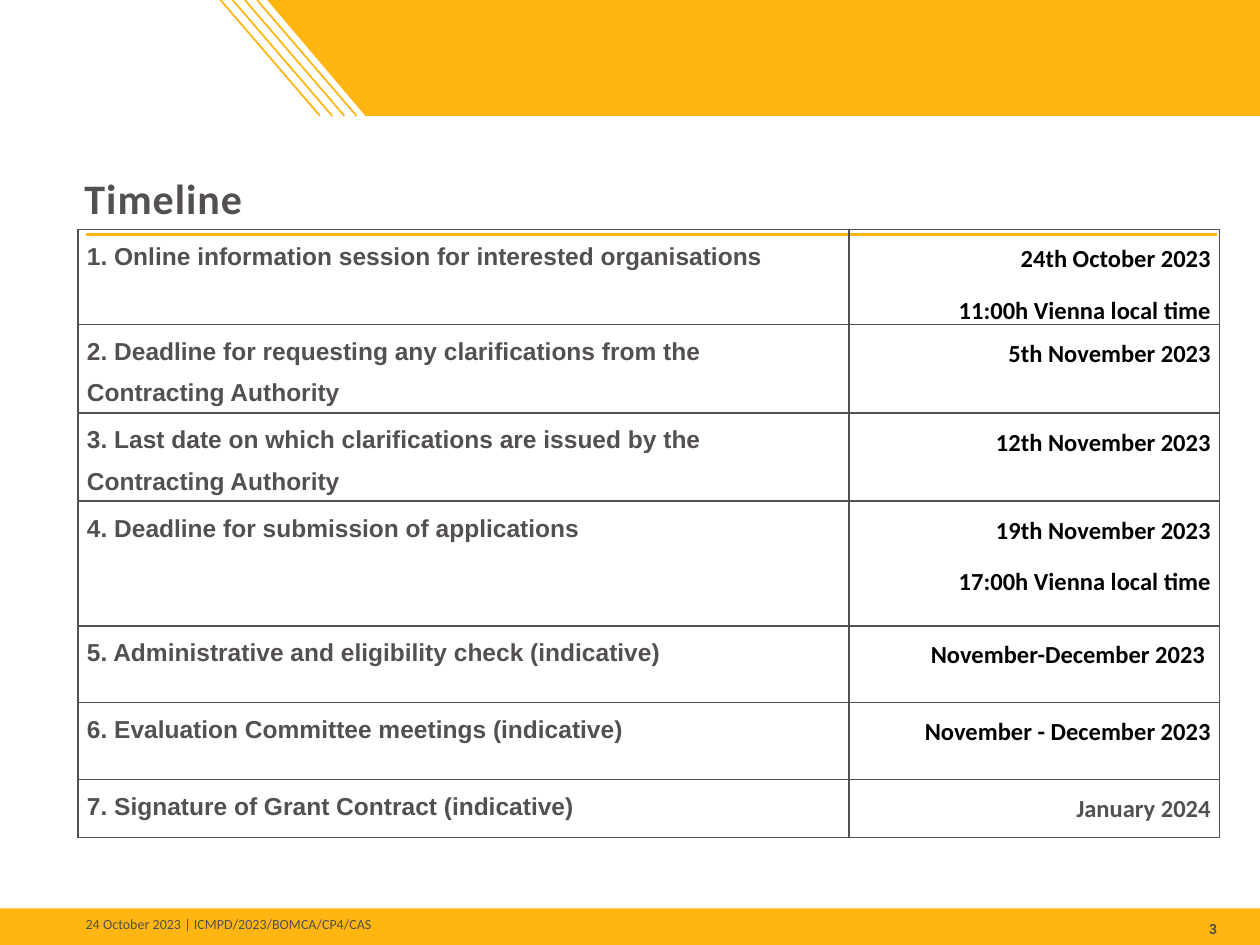
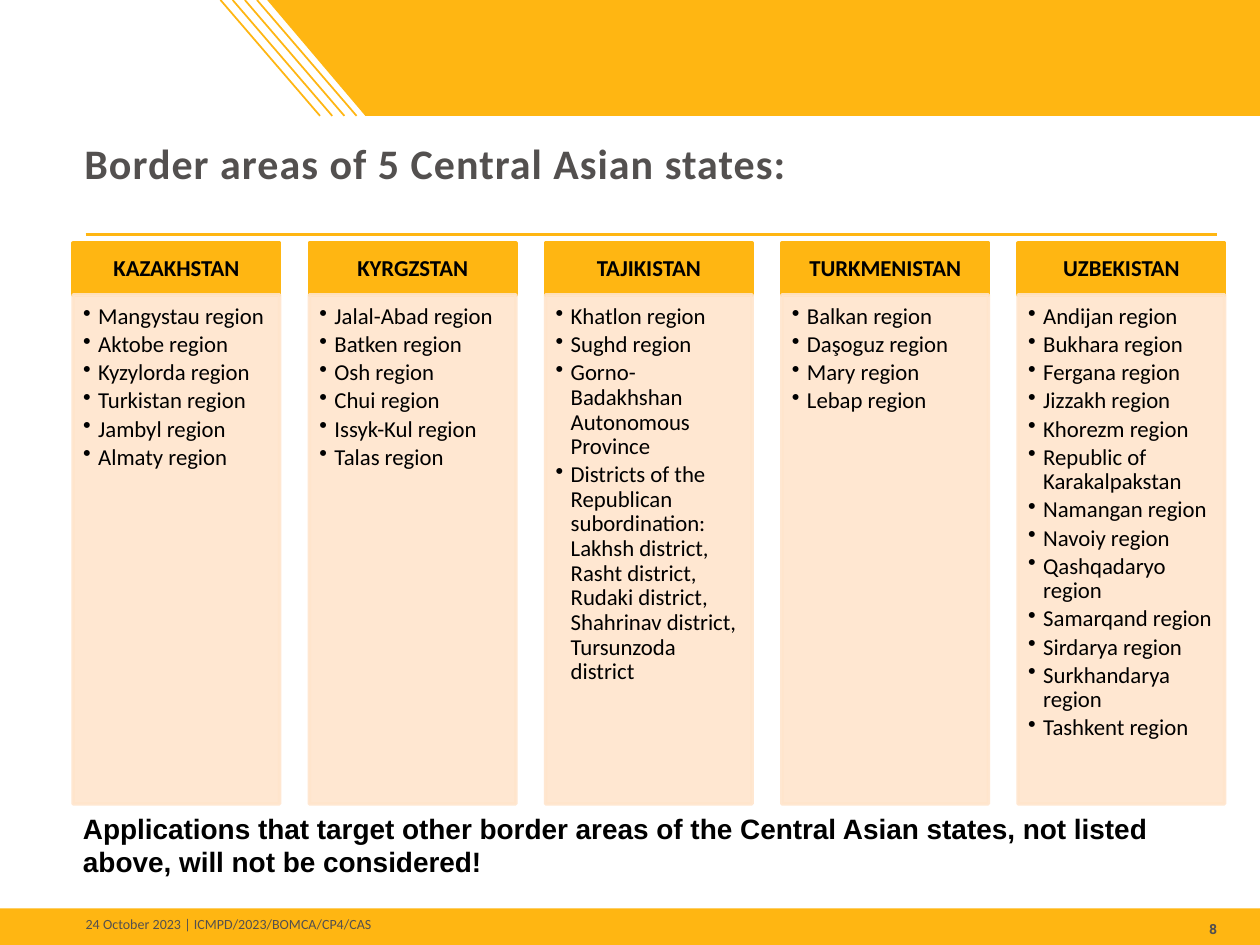
"""Build two slides of a grant call: its timeline and the border areas it covers."""
import dataclasses

import lxml.etree
import pptx
import pptx.dml.color
import pptx.enum.shapes
import pptx.enum.text
import pptx.oxml.ns
import pptx.util

Inches = pptx.util.Inches
Pt = pptx.util.Pt
RGB = pptx.dml.color.RGBColor
qn = pptx.oxml.ns.qn
Align = pptx.enum.text.PP_ALIGN
Anchor = pptx.enum.text.MSO_ANCHOR
Shape = pptx.enum.shapes.MSO_SHAPE


@dataclasses.dataclass(frozen=True)
class Theme:
    gold: str = "FFB612"
    cream: str = "FFE5CC"
    grey: str = "53504F"
    black: str = "000000"
    sans: str = "Calibri"
    block: str = "Arial"
    digit: str = "Roboto"
    small: int = 8
    list: int = 13
    cell: int = 14
    note: int = 16
    title: int = 24


theme = Theme()


def write(frame, lines, face, size, tint, bold=False, align=Align.LEFT,
          inset=(0, 0, 0, 0), anchor=Anchor.TOP):
    """Fill a text frame with lines in one style."""
    frame.word_wrap = True
    frame.vertical_anchor = anchor
    frame.margin_left, frame.margin_top, frame.margin_right, frame.margin_bottom = map(Inches, inset)
    frame.text = "\n".join(lines)
    for para in frame.paragraphs:
        para.alignment = align
        for run in para.runs:
            run.font.name = face
            run.font.size = Pt(size)
            run.font.bold = bold
            run.font.color.rgb = RGB.from_string(tint)


def paint(shape, tint, edge=0):
    """Give a shape a flat fill, with an edge of the same colour if asked."""
    shape.shadow.inherit = False
    shape.fill.solid()
    shape.fill.fore_color.rgb = RGB.from_string(tint)
    if edge:
        shape.line.color.rgb = RGB.from_string(tint)
        shape.line.width = Pt(edge)
    else:
        shape.line.fill.background()


deck = pptx.Presentation()
deck.slide_width, deck.slide_height = Inches(10), Inches(7.5)

stripes = [(1.75 + 0.29 * i / 3, 0, 2.54 + 0.29 * i / 3, 0.92, 1) for i in range(4)]
rules = [(0.68, 1.86, 9.66, 1.86, 1.5)] + stripes
heads = [("Timeline", 0.83, "3"), ("Border areas of 5 Central Asian states:", 0.55, "8")]

for head, height, number in heads:
    slide = deck.slides.add_slide(deck.slide_layouts[5])
    shapes = slide.shapes

    pen = shapes.build_freeform(Inches(2.12), 0)
    pen.add_line_segments([(Inches(x), Inches(y)) for x, y in [(10, 0), (10, 0.92), (2.9, 0.92)]])
    paint(pen.convert_to_shape(), theme.gold)
    paint(shapes.add_shape(Shape.RECTANGLE, 0, Inches(7.21), Inches(10), Inches(0.29)), theme.gold)

    for left, top, right, low, width in rules:
        rule = shapes.add_connector(pptx.enum.shapes.MSO_CONNECTOR.STRAIGHT,
                                    Inches(left), Inches(top), Inches(right), Inches(low))
        rule.line.color.rgb = RGB.from_string(theme.gold)
        rule.line.width = Pt(width)
        lxml.etree.SubElement(rule._element.spPr, qn("a:effectLst"))

    page = shapes.add_textbox(Inches(9), Inches(7.31), Inches(0.66), Inches(0.13))
    write(page.text_frame, [number], theme.digit, theme.small, theme.grey, True,
          Align.RIGHT, anchor=Anchor.MIDDLE)
    foot = shapes.add_textbox(Inches(0.68), Inches(7.27), Inches(4.32), Inches(0.13))
    write(foot.text_frame, ["24 October 2023 | ICMPD/2023/BOMCA/CP4/CAS"], theme.sans,
          theme.small, theme.grey, anchor=Anchor.MIDDLE)

    title = shapes.title
    title.left, title.top, title.width, title.height = map(Inches, (0.57, 0.99, 9.15, height))
    write(title.text_frame, [head], theme.sans, theme.title, theme.grey, True,
          inset=(0.1, 0.05, 0.1, 0.05), anchor=Anchor.BOTTOM)
    title.text_frame.auto_size = pptx.enum.text.MSO_AUTO_SIZE.NONE
    title.text_frame.paragraphs[0].runs[0].font._element.set("spc", "60")

steps = [
    (0.71, "1. Online information session for interested organisations",
     ["24th October 2023", "11:00h Vienna local time"]),
    (0.65, "2. Deadline for requesting any clarifications from the Contracting Authority",
     ["5th November 2023"]),
    (0.65, "3. Last date on which clarifications are issued by the Contracting Authority",
     ["12th November 2023"]),
    (0.99, "4. Deadline for submission of applications",
     ["19th November 2023", "17:00h Vienna local time"]),
    (0.61, "5. Administrative and eligibility check (indicative)", ["November-December 2023 "]),
    (0.61, "6. Evaluation Committee meetings (indicative)", ["November - December 2023"]),
    (0.46, "7. Signature of Grant Contract (indicative)", ["January 2024"]),
]

first, second = deck.slides
table = first.shapes.add_table(len(steps), 2, Inches(0.62), Inches(1.82),
                               Inches(9.06), Inches(4.68)).table
table.first_row = table.horz_banding = False
table.columns[0].width, table.columns[1].width = Inches(6.12), Inches(2.94)

for row, (height, step, dates) in enumerate(steps):
    table.rows[row].height = Inches(height)
    tint = theme.grey if row == len(steps) - 1 else theme.black
    for col, (lines, face, ink, align) in enumerate([
            ([step], theme.block, theme.grey, Align.LEFT),
            (dates, theme.sans, tint, Align.RIGHT)]):
        cell = table.cell(row, col)
        write(cell.text_frame, lines, face, theme.cell, ink, True, align)
        cell.margin_left = cell.margin_right = Inches(0.07)
        cell.margin_top = cell.margin_bottom = 0
        cell.vertical_anchor = Anchor.TOP
        for para in cell.text_frame.paragraphs:
            para.line_spacing = 1.5
            if col:
                para.space_before = Pt(4)
        props = cell._tc.get_or_add_tcPr()
        for side in ("lnL", "lnR", "lnT", "lnB"):
            line = lxml.etree.SubElement(props, qn("a:" + side), w=str(Pt(1)))
            fill = lxml.etree.SubElement(line, qn("a:solidFill"))
            lxml.etree.SubElement(fill, qn("a:srgbClr"), val=theme.grey)
        cell.fill.background()

areas = {
    "KAZAKHSTAN": ["Mangystau region", "Aktobe region", "Kyzylorda region",
                   "Turkistan region", "Jambyl region", "Almaty region"],
    "KYRGZSTAN": ["Jalal-Abad region", "Batken region", "Osh region",
                  "Chui region", "Issyk-Kul region", "Talas region"],
    "TAJIKISTAN": ["Khatlon region", "Sughd region", "Gorno-Badakhshan Autonomous Province",
                   "Districts of the Republican subordination: Lakhsh district, Rasht district, "
                   "Rudaki district, Shahrinav district, Tursunzoda district"],
    "TURKMENISTAN": ["Balkan region", "Daşoguz region", "Mary region", "Lebap region"],
    "UZBEKISTAN": ["Andijan region", "Bukhara region", "Fergana region", "Jizzakh region",
                   "Khorezm region", "Republic of Karakalpakstan", "Namangan region",
                   "Navoiy region", "Qashqadaryo region", "Samarqand region",
                   "Sirdarya region", "Surkhandarya region", "Tashkent region"],
}

for i, (state, names) in enumerate(areas.items()):
    left, width = Inches(0.58 + 7.5 * i / 4), Inches(1.64)
    top = second.shapes.add_shape(Shape.RECTANGLE, left, Inches(1.93), width, Inches(0.41))
    paint(top, theme.gold, 2)
    write(top.text_frame, [state], theme.sans, theme.list, theme.black, True, Align.CENTER,
          (0.1, 0.06, 0.1, 0.06), Anchor.MIDDLE)
    top.text_frame.paragraphs[0].line_spacing = 0.9

    body = second.shapes.add_shape(Shape.RECTANGLE, left, Inches(2.34), width, Inches(4.04))
    paint(body, theme.cream, 2)
    for tone in body._element.spPr.iter(qn("a:srgbClr")):
        lxml.etree.SubElement(tone, qn("a:alpha"), val="90000")
    write(body.text_frame, names, theme.sans, theme.list, theme.black,
          inset=(0.08, 0.08, 0.1, 0.11))
    for para in body.text_frame.paragraphs:
        props = para._p.get_or_add_pPr()
        props.set("marL", str(Inches(0.12)))
        props.set("indent", str(-Inches(0.12)))
        lxml.etree.SubElement(props, qn("a:buChar"), char="•")
        para.line_spacing = 0.9
        para.space_after = Pt(2)

note = second.shapes.add_textbox(Inches(0.56), Inches(6.39), Inches(9.08), Inches(0.65))
write(note.text_frame, ["Applications that target other border areas of the Central Asian states, "
                        "not listed above, will not be considered!"],
      theme.block, theme.note, theme.black, True, inset=(0.1, 0.05, 0.1, 0.05))

deck.save("out.pptx")
